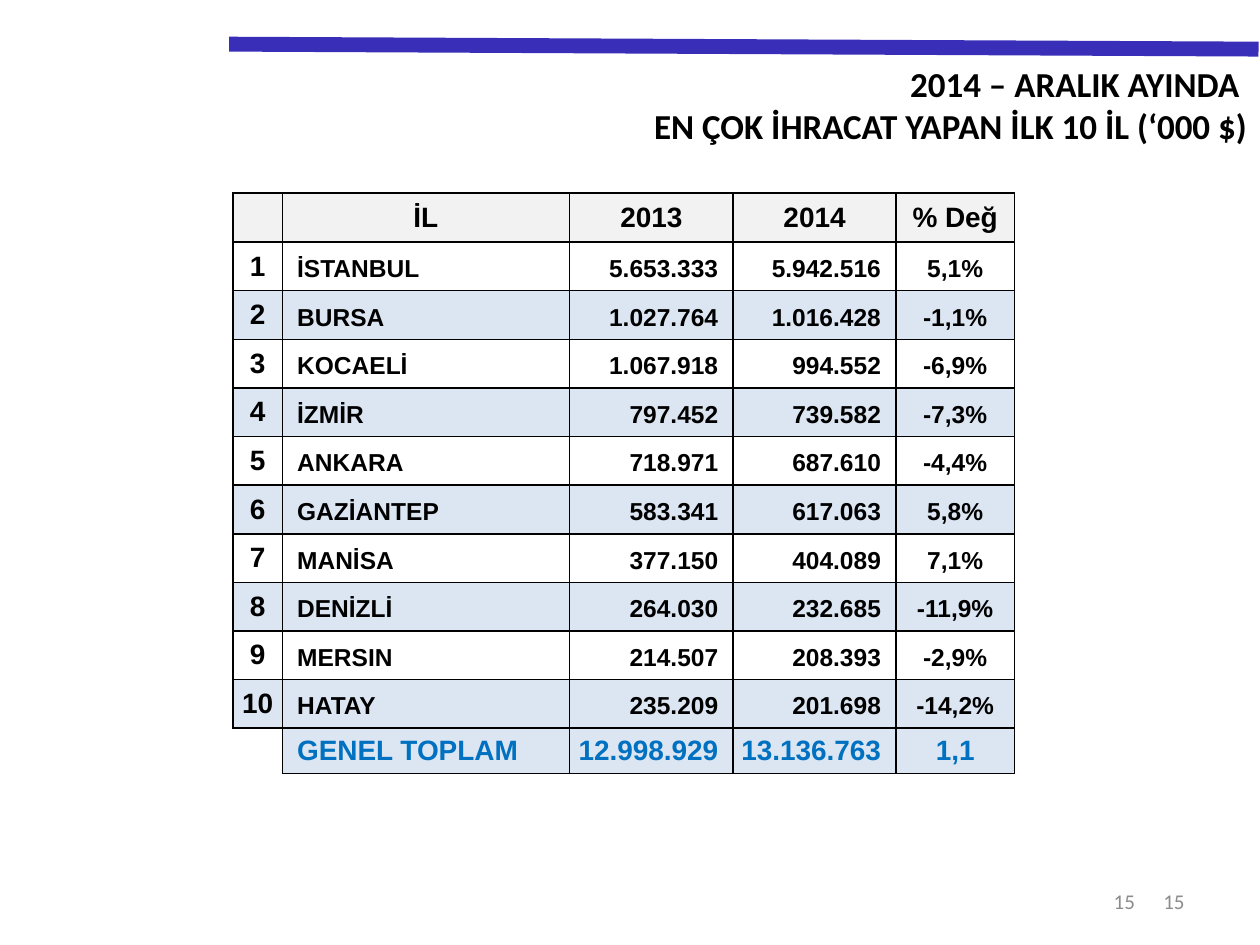
import pptx
import pptx.dml.color
import pptx.enum.shapes
import pptx.enum.text
import pptx.oxml.ns
import pptx.util
from lxml import etree

Cm = pptx.util.Cm
RGBColor = pptx.dml.color.RGBColor
ALIGN = pptx.enum.text.PP_ALIGN
ANCHOR = pptx.enum.text.MSO_ANCHOR
qn = pptx.oxml.ns.qn

BLACK = RGBColor(0x00, 0x00, 0x00)
GREY = RGBColor(0x8C, 0x8C, 0x8C)
BAR = RGBColor(0x38, 0x2E, 0xB8)
HEADER = RGBColor(0xF2, 0xF2, 0xF2)
BAND = RGBColor(0xDC, 0xE6, 0xF2)
TOTAL = RGBColor(0x00, 0x70, 0xC0)

ROWS = [
    ("", "İL", "2013", "2014", "% Değ"),
    ("1", "İSTANBUL", "5.653.333", "5.942.516", "5,1%"),
    ("2", "BURSA", "1.027.764", "1.016.428", "-1,1%"),
    ("3", "KOCAELİ", "1.067.918", "994.552", "-6,9%"),
    ("4", "İZMİR", "797.452", "739.582", "-7,3%"),
    ("5", "ANKARA", "718.971", "687.610", "-4,4%"),
    ("6", "GAZİANTEP", "583.341", "617.063", "5,8%"),
    ("7", "MANİSA", "377.150", "404.089", "7,1%"),
    ("8", "DENİZLİ", "264.030", "232.685", "-11,9%"),
    ("9", "MERSIN", "214.507", "208.393", "-2,9%"),
    ("10", "HATAY", "235.209", "201.698", "-14,2%"),
    ("", "GENEL TOPLAM", "12.998.929", "13.136.763", "1,1"),
]
COL_WIDTHS = (0.99, 5.79, 3.3, 3.28, 2.39)
COL_ALIGNS = (ALIGN.CENTER, ALIGN.LEFT, ALIGN.RIGHT, ALIGN.RIGHT, ALIGN.CENTER)
COL_MARGINS = ((0, 0, 0, 0), (0.3, 0.02, 0.02, 0), (0.02, 0.02, 0.3, 0),
               (0.02, 0.02, 0.3, 0), (0.02, 0.02, 0.02, 0))


def add_text(p, text, size, font, color, bold, align):
    """Add one formatted run to an aligned paragraph."""
    p.alignment = align
    r = p.add_run()
    r.text = text
    r.font.size = pptx.util.Pt(size)
    r.font.name = font
    r.font.bold = bold
    r.font.color.rgb = color


def add_bar(s, left, top, width, drop):
    """Draw the slightly sloping bar along the top."""
    line = s.shapes.add_connector(
        pptx.enum.shapes.MSO_CONNECTOR.STRAIGHT,
        Cm(left), Cm(top), Cm(left + width), Cm(top + drop))
    line.line.color.rgb = BAR
    line.line.width = pptx.util.Pt(8.5)
    etree.SubElement(line._element.spPr, qn("a:effectLst"))


def add_text_box(s, left, top, width, height, lines, size, color, bold, anchor):
    """Place right-aligned lines of text in a box."""
    tf = s.shapes.add_textbox(Cm(left), Cm(top), Cm(width), Cm(height)).text_frame
    tf.word_wrap = True
    tf.vertical_anchor = anchor
    for i, text in enumerate(lines):
        p = tf.add_paragraph() if i else tf.paragraphs[0]
        add_text(p, text, size, "Calibri", color, bold, ALIGN.RIGHT)


def set_borders(cell, sides):
    """Give the named sides a black line and the others none."""
    tc_pr = cell._tc.get_or_add_tcPr()
    for side in "LRTB":
        ln = etree.SubElement(tc_pr, qn("a:ln" + side), w="12700")
        if side in sides:
            fill = etree.SubElement(ln, qn("a:solidFill"))
            etree.SubElement(fill, qn("a:srgbClr"), val=str(BLACK))
        else:
            etree.SubElement(ln, qn("a:noFill"))


def format_cell(cell, text, row, col):
    """Style one cell by its row and column."""
    is_header, is_total = row == 0, row == len(ROWS) - 1
    is_corner = is_total and col == 0
    set_borders(cell, "RT" if is_corner else "LRTB")
    if is_header or (row % 2 == 0 or is_total) and not is_corner:
        cell.fill.solid()
        cell.fill.fore_color.rgb = HEADER if is_header else BAND
    else:
        cell.fill.background()
    margins = (0.25, 0.13, 0.25, 0.13) if is_header and text else COL_MARGINS[col]
    (cell.margin_left, cell.margin_top,
     cell.margin_right, cell.margin_bottom) = map(Cm, margins)
    cell.vertical_anchor = ANCHOR.MIDDLE
    if text:
        p = cell.text_frame.paragraphs[0]
        is_body = col > 0 and not is_header and not is_total
        if is_body:
            p.line_spacing = 1.15
        add_text(p, text, 14 if is_body else 16, "Arial",
                 TOTAL if is_total else BLACK, True,
                 ALIGN.CENTER if is_header else COL_ALIGNS[col])


def add_export_table(s, left, top, width, height):
    """Build the ranking of provinces by exports."""
    table = s.shapes.add_table(len(ROWS), len(COL_WIDTHS), Cm(left), Cm(top),
                               Cm(width), Cm(height)).table
    table.first_row = False
    table.horz_banding = False
    for column, col_width in zip(table.columns, COL_WIDTHS):
        column.width = Cm(col_width)
    heights = [0.99] + [0.98] * (len(ROWS) - 2) + [0.91]
    for i, values in enumerate(ROWS):
        table.rows[i].height = Cm(heights[i])
        for j, text in enumerate(values):
            format_cell(table.cell(i, j), text, i, j)


def main():
    """Build and save the slide."""
    prs = pptx.Presentation()
    prs.slide_width, prs.slide_height = Cm(25.4), Cm(19.05)
    s = prs.slides.add_slide(prs.slide_layouts[6])
    add_bar(s, 4.62, 0.89, 20.75, 0.1)
    for left, width in ((18.2, 5.93), (17.8, 5.33)):
        add_text_box(s, left, 17.66, width, 1.01, ["15"], 12, GREY, False,
                     ANCHOR.MIDDLE)
    add_text_box(s, 2.69, 1.14, 22.71, 1.97,
                 ["2014 – ARALIK AYINDA ", "EN ÇOK İHRACAT YAPAN İLK 10 İL (‘000 $)"],
                 20, BLACK, True, ANCHOR.TOP)
    add_export_table(s, 4.7, 3.89, 15.75, 11.7)
    prs.save("out.pptx")


if __name__ == "__main__":
    main()
